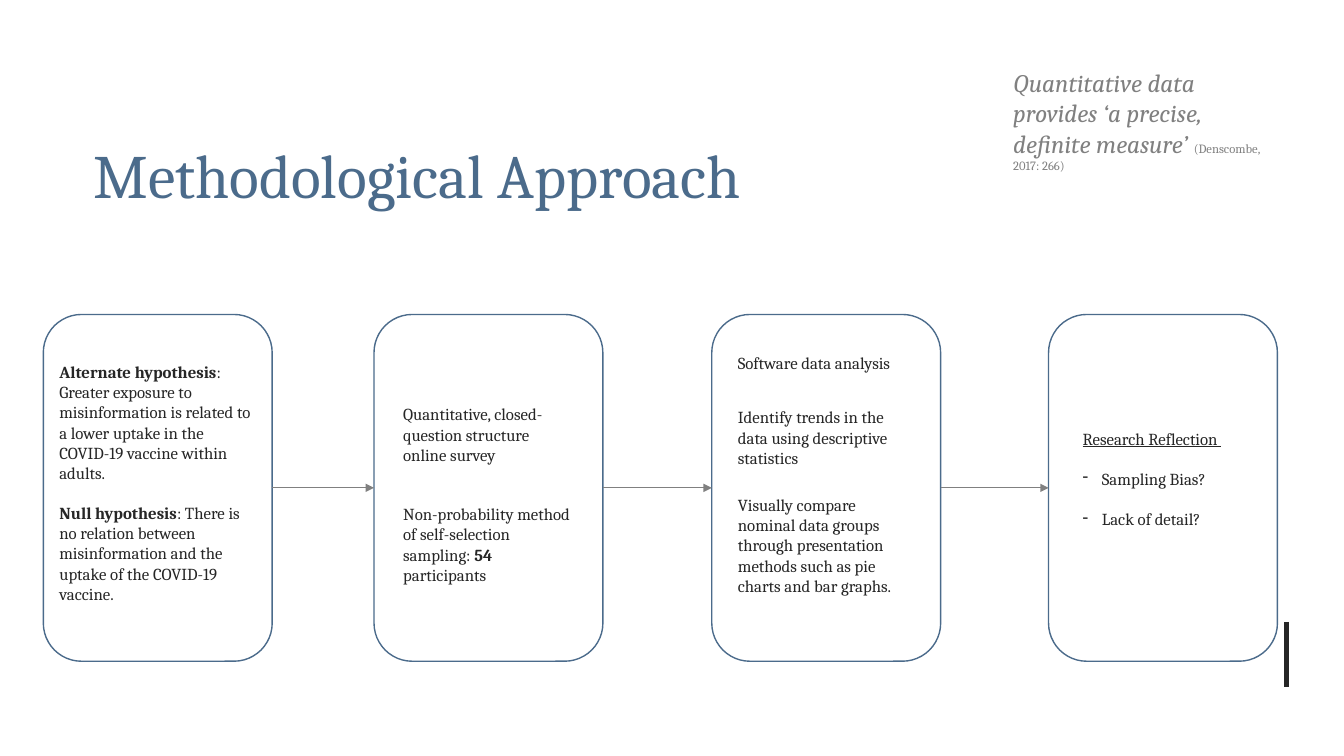
from lxml import etree
from pptx import Presentation
from pptx.dml.color import RGBColor
from pptx.enum.shapes import MSO_CONNECTOR, MSO_SHAPE
from pptx.enum.text import MSO_ANCHOR, PP_ALIGN
from pptx.oxml.ns import qn
from pptx.util import Inches, Pt

STRAIGHT = MSO_CONNECTOR.STRAIGHT
ROUNDED = MSO_SHAPE.ROUNDED_RECTANGLE
LEFT = PP_ALIGN.LEFT
MIDDLE = MSO_ANCHOR.MIDDLE
LEFT_SITE, RIGHT_SITE = 1, 3

COLORS = {"blue": "4B6B8B", "ink": "262626", "gray": "808080", "white": "FFFFFF"}
FONT = "Cambria"
CARD_TOP, CARD_WIDTH, CARD_HEIGHT = 3.12, 2.27, 3.44
PARA_GAP = 14.4
HANGING = 0.19

CARDS = [
    (0.43, [((0.06, 0.42, 2.15, 2.83), [
        [("Alternate hypothesis", {"bold": True}),
         (": Greater exposure to misinformation is related to a lower uptake "
          "in the COVID-19 vaccine within adults.", {})],
        [("Null hypothesis", {"bold": True}),
         (": There is no relation between misinformation and the uptake "
          "of the COVID-19 vaccine.", {})],
    ])]),
    (3.71, [
        ((0.19, 0.84, 1.89, 0.71), [
            [("Quantitative, closed-question structure online survey", {})]]),
        ((0.19, 1.83, 1.89, 0.91), [
            [("Non-probability method of self-selection sampling: ", {}),
             ("54 ", {"bold": True}), ("participants", {})]]),
    ]),
    (7.06, [
        ((0.16, 0.33, 1.76, 0.3), [[("Software data analysis", {})]]),
        ((0.16, 0.87, 1.85, 0.71), [
            [("Identify trends in the data using descriptive statistics", {})]]),
        ((0.16, 1.74, 1.76, 1.51), [
            [("Visually compare nominal data groups through presentation methods "
              "such as pie charts and bar graphs.", {})]]),
    ]),
    (10.4, [((0.24, 1.08, 1.79, 1.31), [
        [("Research Reflection ", {"underline": True})],
        [("Sampling Bias?", {"dash": True})],
        [("Lack of detail?", {"dash": True})],
    ])]),
]


def rgb(name):
    """Return the named colour."""
    return RGBColor.from_string(COLORS[name])


def add_span(para, text, size=12, color="ink", bold=False, italic=False,
             underline=False, dash=False):
    """Add formatted text to a paragraph, with a dash bullet if asked."""
    span = para.add_run()
    span.text = text
    font = span.font
    font.name, font.size, font.color.rgb = FONT, Pt(size), rgb(color)
    font.bold, font.italic, font.underline = bold, italic, underline
    if dash:
        properties = para._p.get_or_add_pPr()
        properties.set("marL", str(Inches(HANGING)))
        properties.set("indent", str(-Inches(HANGING)))
        etree.SubElement(properties, qn("a:buChar")).set("char", "-")


def add_text(page, area, paragraphs):
    """Place a wrapping text box with evenly spaced paragraphs."""
    box = page.shapes.add_textbox(*map(Inches, area))
    frame = box.text_frame
    frame.word_wrap = True
    for index, spans in enumerate(paragraphs):
        para = frame.add_paragraph() if index else frame.paragraphs[0]
        para.alignment = LEFT
        if index:
            para.space_before = Pt(PARA_GAP)
        for text, style in spans:
            add_span(para, text, **style)


def add_title(page, area):
    """Place and format the slide title."""
    title = page.shapes.title
    title.left, title.top, title.width, title.height = map(Inches, area)
    frame = title.text_frame
    frame.word_wrap = True
    frame.vertical_anchor = MIDDLE
    frame.paragraphs[0].alignment = LEFT
    add_span(frame.paragraphs[0], "Methodological Approach", size=44, color="blue")


def add_quote(page, area):
    """Place the quotation and its citation."""
    add_text(page, area, [[
        ("Quantitative data provides ‘a precise, definite measure’ ",
         {"size": 18, "color": "gray", "italic": True}),
        ("(Denscombe, 2017: 266)", {"size": 9, "color": "gray"}),
    ]])


def add_card(page, area, notes):
    """Draw one outlined card with its notes and return the outline."""
    left, top = area[:2]
    card = page.shapes.add_shape(ROUNDED, *map(Inches, area))
    card.shadow.inherit = False
    card.fill.background()
    card.line.color.rgb = rgb("blue")
    card.line.width = Pt(1)
    for (x, y, width, height), paragraphs in notes:
        add_text(page, (left + x, top + y, width, height), paragraphs)
    return card


def add_line(page, start, end, color, width):
    """Draw a straight line without a shadow."""
    line = page.shapes.add_connector(STRAIGHT, *map(Inches, start + end))
    line.line.color.rgb = rgb(color)
    line.line.width = Pt(width)
    etree.SubElement(line._element.spPr, qn("a:effectLst"))
    return line


def add_arrow(page, source, target):
    """Join two neighbouring cards with an arrow."""
    arrow = add_line(page, (0, 0), (1, 1), "gray", 0.5)
    arrow.begin_connect(source, RIGHT_SITE)
    arrow.end_connect(target, LEFT_SITE)
    outline = arrow.line._get_or_add_ln()
    etree.SubElement(outline, qn("a:tailEnd")).set("type", "triangle")


def add_process(page, top, width, height):
    """Draw the row of cards and the arrows between them."""
    cards = [add_card(page, (left, top, width, height), notes) for left, notes in CARDS]
    for source, target in zip(cards, cards[1:]):
        add_arrow(page, source, target)


def main():
    """Build and save the slide."""
    deck = Presentation()
    deck.slide_width, deck.slide_height = Inches(13.33), Inches(7.5)
    page = deck.slides.add_slide(deck.slide_layouts[5])
    page.background.fill.solid()
    page.background.fill.fore_color.rgb = rgb("white")
    add_line(page, (12.76, 6.17), (12.76, 6.82), "ink", 3)
    add_title(page, (0.83, 0.94, 11.35, 1.57))
    add_process(page, CARD_TOP, CARD_WIDTH, CARD_HEIGHT)
    add_quote(page, (9.95, 0.62, 2.72, 1.16))
    deck.save("out.pptx")


if __name__ == "__main__":
    main()
